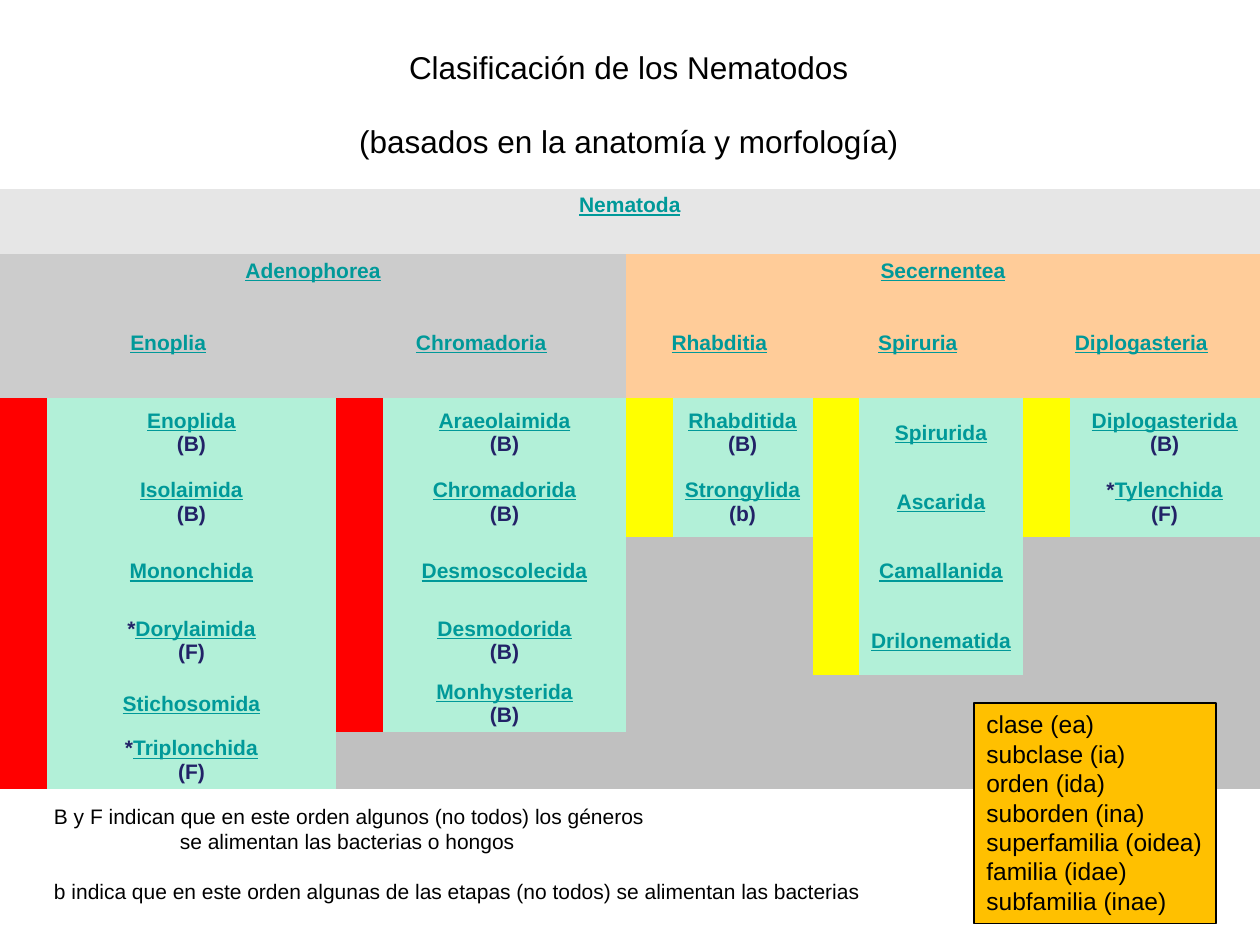
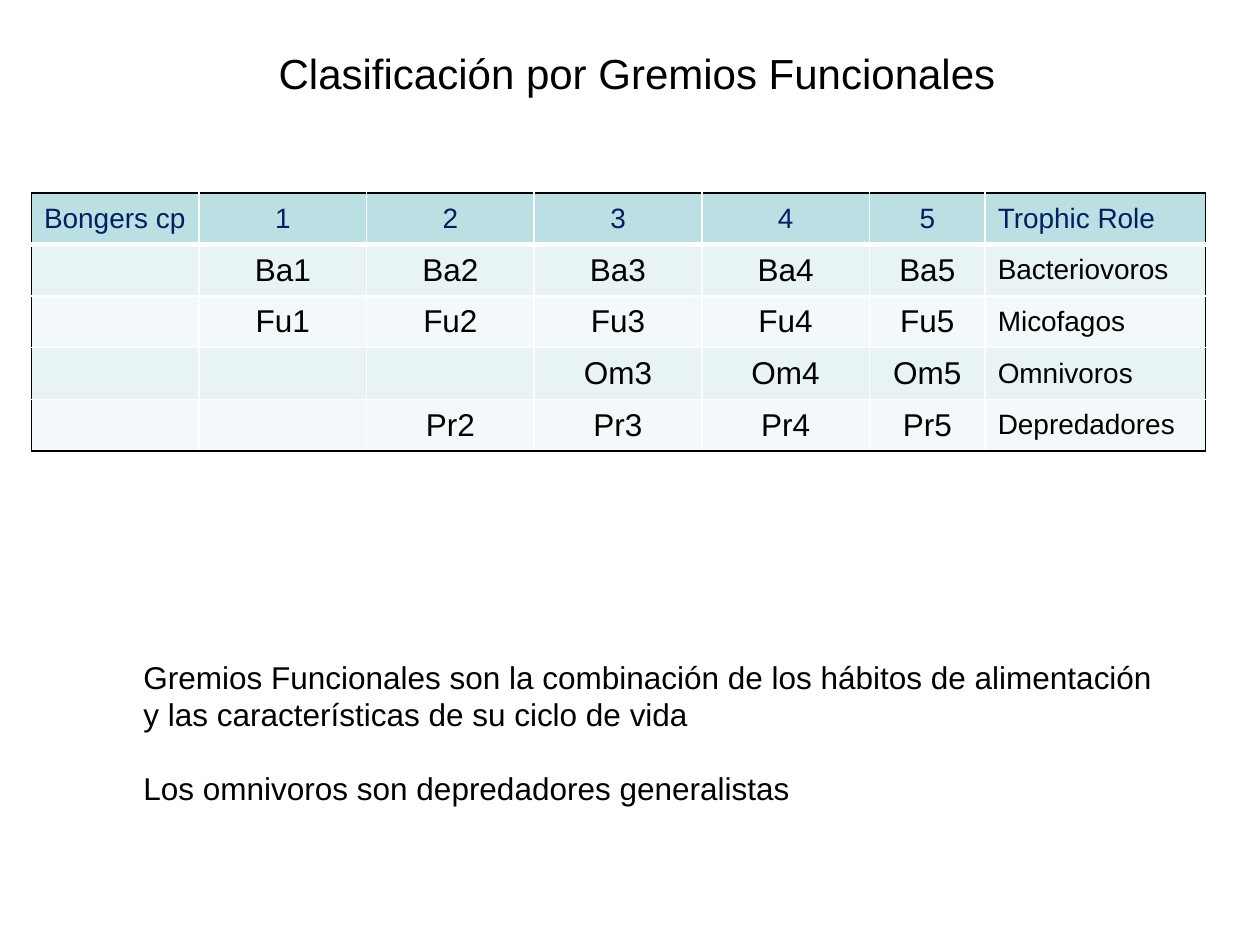
from lxml import etree
from pptx import Presentation, util as u
from pptx.dml.color import RGBColor
from pptx.enum import shapes, text
from pptx.oxml.ns import qn

FONT = "Arial"
COLORS = {
    "black": "000000", "white": "FFFFFF", "name": "009999", "mark": "222267",
    "phylum": "E6E6E6", "adenophorea": "CCCCCC", "secernentea": "FFCC99",
    "order": "B2F0D8", "red": "FF0000", "yellow": "FFFF00", "empty": "C0C0C0",
    "legend": "FFC000", "heading": "002060", "header": "BBE0E3",
    "odd": "E7F3F4", "even": "F3F9FA",
}
PLAIN_TABLE_STYLE = "{2D5ABB26-0587-4C30-8999-92F81FD0307C}"
LEFT, CENTER = text.PP_ALIGN.LEFT, text.PP_ALIGN.CENTER

ORDERS = [
    ("red", ["Enoplida (B)", "Isolaimida (B)", "Mononchida", "*Dorylaimida (F)",
             "Stichosomida", "*Triplonchida (F)"]),
    ("red", ["Araeolaimida (B)", "Chromadorida (B)", "Desmoscolecida",
             "Desmodorida (B)", "Monhysterida (B)"]),
    ("yellow", ["Rhabditida (B)", "Strongylida (b)"]),
    ("yellow", ["Spirurida", "Ascarida", "Camallanida", "Drilonematida"]),
    ("yellow", ["Diplogasterida (B)", "*Tylenchida (F)"]),
]
TAXA = [
    [("Nematoda", "phylum", 10)],
    [("Adenophorea", "adenophorea", 4), ("Secernentea", "secernentea", 6)],
    [("Enoplia", "adenophorea", 2), ("Chromadoria", "adenophorea", 2),
     ("Rhabditia", "secernentea", 2), ("Spiruria", "secernentea", 2),
     ("Diplogasteria", "secernentea", 2)],
]
GUILDS = [
    ["Bongers cp", "1", "2", "3", "4", "5", "Trophic Role"],
    ["", "Ba1", "Ba2", "Ba3", "Ba4", "Ba5", "Bacteriovoros"],
    ["", "Fu1", "Fu2", "Fu3", "Fu4", "Fu5", "Micofagos"],
    ["", "", "", "Om3", "Om4", "Om5", "Omnivoros"],
    ["", "", "Pr2", "Pr3", "Pr4", "Pr5", "Depredadores"],
]
RANKS = ["clase (ea)", "subclase (ia)", "orden (ida)", "suborden (ina)",
         "superfamilia (oidea)", "familia (idae)", "subfamilia (inae)"]


def rgb(color):
    return RGBColor.from_string(COLORS[color])


def add_run(paragraph, words, size, color="black", bold=False, underline=False):
    run = paragraph.add_run()
    run.text = words
    font = run.font
    font.name, font.size, font.bold, font.underline = FONT, u.Pt(size), bold, underline
    font.color.rgb = rgb(color)


def write_lines(frame, lines, size, align=LEFT, gap=0):
    for index, line in enumerate(lines):
        paragraph = frame.add_paragraph() if index else frame.paragraphs[0]
        paragraph.alignment = align
        paragraph.space_before = u.Pt(gap if index else 0)
        for part, words in enumerate(line.split("\n")):
            if part:
                paragraph.add_line_break()
            add_run(paragraph, words, size)


def set_frame(frame, wrap):
    frame.word_wrap = wrap
    frame.auto_size = text.MSO_AUTO_SIZE.NONE
    frame.vertical_anchor = text.MSO_ANCHOR.TOP


def add_title(slide, box, lines, size, gap=0):
    title = slide.shapes.title
    title.left, title.top, title.width, title.height = map(u.Inches, box)
    set_frame(title.text_frame, False)
    write_lines(title.text_frame, lines, size, CENTER, gap)


def add_note(slide, box, lines, size, gap=0, wrap=False):
    note = slide.shapes.add_textbox(*map(u.Inches, box))
    set_frame(note.text_frame, wrap)
    write_lines(note.text_frame, lines, size, gap=gap)
    return note


def add_legend(slide, box, lines, size):
    legend = slide.shapes.add_shape(shapes.MSO_SHAPE.RECTANGLE, *map(u.Inches, box))
    legend.shadow.inherit = False
    legend.fill.solid()
    legend.fill.fore_color.rgb = rgb("legend")
    legend.line.color.rgb = rgb("black")
    legend.line.width = u.Pt(1)
    set_frame(legend.text_frame, False)
    write_lines(legend.text_frame, lines, size)


def add_grid(slide, left, top, widths, heights):
    frame = slide.shapes.add_table(
        len(heights), len(widths), u.Inches(left), u.Inches(top),
        u.Inches(sum(widths)), u.Inches(sum(heights)))
    table = frame.table
    table.first_row = table.horz_banding = False
    table._tbl.tblPr.find(qn("a:tableStyleId")).text = PLAIN_TABLE_STYLE
    for column, width in zip(table.columns, widths):
        column.width = u.Inches(width)
    for row, height in zip(table.rows, heights):
        row.height = u.Inches(height)
    return table


def fill_cell(cell, color):
    cell.fill.solid()
    cell.fill.fore_color.rgb = rgb(color)
    cell.vertical_anchor = text.MSO_ANCHOR.MIDDLE


def fill_taxon_cell(cell, color, label=""):
    fill_cell(cell, color)
    cell.margin_left = cell.margin_right = u.Inches(0.05)
    cell.margin_top = cell.margin_bottom = u.Inches(0.03)
    paragraph = cell.text_frame.paragraphs[0]
    if not label:
        paragraph._p.get_or_add_endParaRPr().set("sz", "800")
        return
    name, _, diet = label.partition(" ")
    paragraph.alignment = CENTER
    if name.startswith("*"):
        add_run(paragraph, "*", 12, "mark", bold=True)
    add_run(paragraph, name.lstrip("*"), 12, "name", bold=True, underline=True)
    if diet:
        paragraph = cell.text_frame.add_paragraph()
        paragraph.alignment = CENTER
        add_run(paragraph, diet, 12, "mark", bold=True)


def add_border(cell, side, color, width):
    line = etree.SubElement(cell._tc.get_or_add_tcPr(), qn("a:ln" + side),
                            w=str(u.Pt(width)))
    solid = etree.SubElement(line, qn("a:solidFill"))
    etree.SubElement(solid, qn("a:srgbClr"), val=COLORS[color])


def add_taxonomy(slide):
    widths = [w for name in (2.3, 1.93, 1.11, 1.3, 1.51) for w in (0.37, name)]
    heights = [0.26, 0.26, 0.26, 0.25, 0.38, 0.25] + [0.55] * 4 + [0.45] * 2
    table = add_grid(slide, 0, 1.5, widths, heights)
    for level, taxa in enumerate(TAXA):
        column = 0
        for label, color, span in taxa:
            for row, words in ((2 * level, label), (2 * level + 1, "")):
                cell = table.cell(row, column)
                cell.merge(table.cell(row, column + span - 1))
                fill_taxon_cell(cell, color, words)
            column += span
    first_order = 2 * len(TAXA)
    for group, (stripe, orders) in enumerate(ORDERS):
        for index in range(len(heights) - first_order):
            present = index < len(orders)
            row = first_order + index
            fill_taxon_cell(table.cell(row, 2 * group), stripe if present else "empty")
            fill_taxon_cell(table.cell(row, 2 * group + 1),
                            "order" if present else "empty",
                            orders[index] if present else "")


def add_guilds(slide):
    last_row, last_column = len(GUILDS) - 1, len(GUILDS[0]) - 1
    table = add_grid(slide, 0.25, 1.53, [1.33] * 5 + [0.92, 1.75],
                     [0.41] * len(GUILDS))
    for r, guild in enumerate(GUILDS):
        for c, label in enumerate(guild):
            cell = table.cell(r, c)
            outer = {"L": c == 0, "R": c == last_column,
                     "T": r == 0, "B": r == last_row}
            for side, is_outer in outer.items():
                add_border(cell, side, "black" if is_outer else "white",
                           3 if r == 0 and side == "B" else 1)
            fill_cell(cell, "header" if r == 0 else "odd" if r % 2 else "even")
            if label:
                inner = 0 < c < last_column
                paragraph = cell.text_frame.paragraphs[0]
                paragraph.alignment = CENTER if inner else LEFT
                add_run(paragraph, label, 18 if r and inner else 16,
                        "black" if r else "heading")


def main():
    deck = Presentation()
    deck.slide_width, deck.slide_height = u.Inches(10), u.Inches(7.5)
    title_only = deck.slide_layouts[5]

    classification = deck.slides.add_slide(title_only)
    add_title(classification, (2.73, 0.33, 4.52, 1.01),
              ["Clasificación de los Nematodos",
               "(basados en la anatomía y morfología)"], 18, gap=20.7)
    add_taxonomy(classification)
    diets = add_note(classification, (0.33, 6.33, 5.94, 0.5),
                     ["B y F indican que en este orden algunos (no todos) los géneros",
                      "se alimentan las bacterias o hongos"], 12, wrap=True)
    continuation = diets.text_frame.paragraphs[1]._p.get_or_add_pPr()
    continuation.set("marL", str(u.Inches(1)))
    continuation.set("indent", "0")
    add_note(classification, (0.33, 6.92, 6.78, 0.3),
             ["b indica que en este orden algunas de las etapas (no todos) "
              "se alimentan las bacterias"], 12)
    add_legend(classification, (7.73, 5.58, 1.92, 1.75), RANKS, 14)

    functional = deck.slides.add_slide(title_only)
    add_title(functional, (2.08, 0.33, 5.95, 0.5),
              ["Clasificación por Gremios Funcionales"], 24)
    add_guilds(functional)
    add_note(functional, (1.04, 5.17, 8.21, 1.31),
             ["Gremios Funcionales son la combinación de los hábitos de alimentación\n"
              "y las características de su ciclo de vida",
              "Los omnivoros son depredadores generalistas"], 18, gap=20.7)

    deck.save("out.pptx")


if __name__ == "__main__":
    main()
